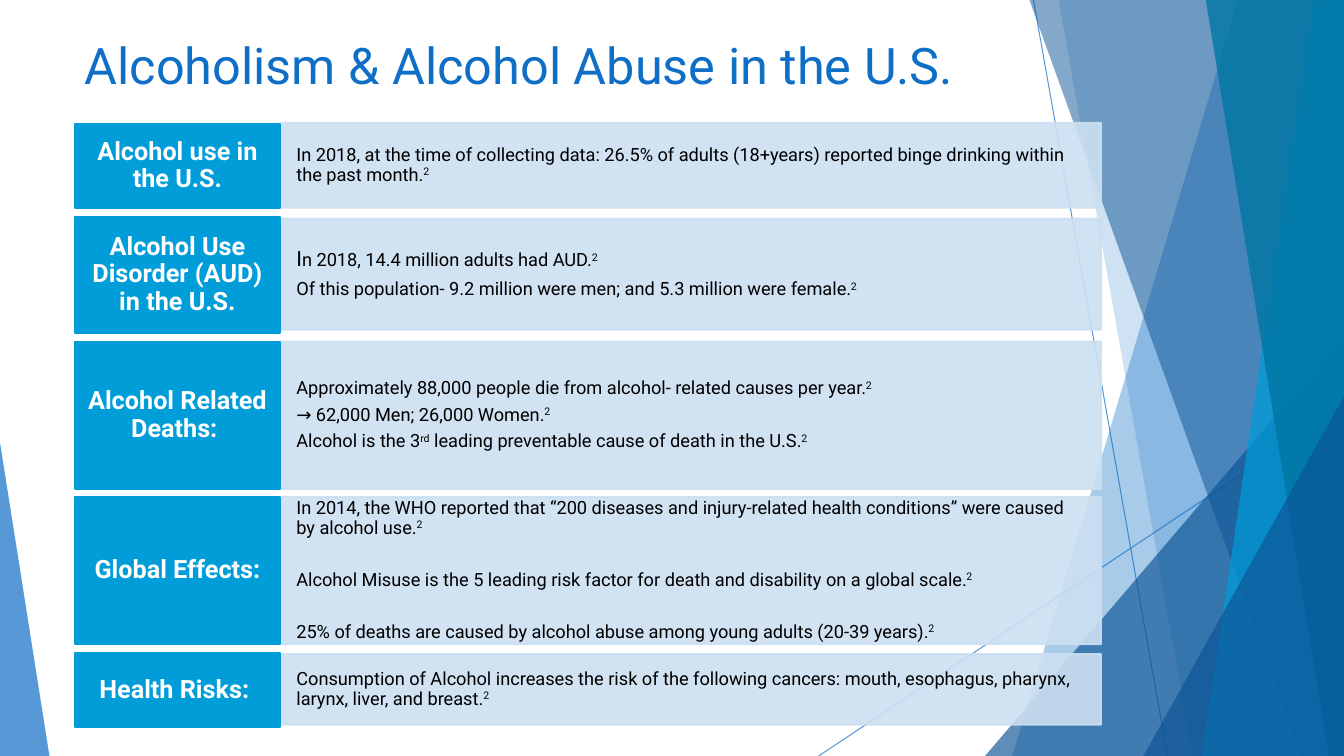
from dataclasses import dataclass

from lxml import etree
from pptx import Presentation
from pptx.dml.color import RGBColor
from pptx.enum.shapes import MSO_CONNECTOR, MSO_SHAPE
from pptx.enum.text import MSO_ANCHOR, MSO_AUTO_SIZE, PP_ALIGN
from pptx.oxml.ns import qn
from pptx.util import Emu, Pt

EMU_PER_PX = 9144
SLIDE_WIDTH, SLIDE_HEIGHT = 1333, 750

STRAIGHT = MSO_CONNECTOR.STRAIGHT
RECTANGLE, TRIANGLE = MSO_SHAPE.RECTANGLE, MSO_SHAPE.ISOSCELES_TRIANGLE
TOP, MIDDLE = MSO_ANCHOR.TOP, MSO_ANCHOR.MIDDLE
LEFT, CENTER = PP_ALIGN.LEFT, PP_ALIGN.CENTER
NO_AUTOFIT = MSO_AUTO_SIZE.NONE

BLUE = RGBColor(0x0F, 0x6F, 0xC6)
NAVY = RGBColor(0x0B, 0x53, 0x94)
CYAN = RGBColor(0x00, 0x9D, 0xD9)
TEAL = RGBColor(0x00, 0x76, 0xA3)
PALE_BLUE = RGBColor(0xCC, 0xDF, 0xF1)
WHITE = RGBColor(0xFF, 0xFF, 0xFF)
BLACK = RGBColor(0x00, 0x00, 0x00)

FONT = "Roboto"
BODY_SIZE = 13
HEADING_LEFT, HEADING_WIDTH, HEADING_INSET = 74, 204, 11
PANEL_LEFT, PANEL_WIDTH, PANEL_INSET = 278, 814, 16


@dataclass(frozen=True)
class Ray:
    start: tuple[int, int]
    end: tuple[int, int]


@dataclass(frozen=True)
class Band:
    """Facet reaching the right slide edge, given by its left corners."""
    top_left: int
    bottom_left: int
    color: RGBColor
    opacity: int


@dataclass(frozen=True)
class Wedge:
    """Right triangle standing on the bottom slide edge."""
    left: int
    top: int
    width: int
    apex: int
    color: RGBColor
    opacity: int


@dataclass(frozen=True)
class Topic:
    """Heading with its facts; carets enclose superscript text."""
    heading: str
    heading_top: int
    heading_height: int
    panel_top: int
    panel_height: int
    facts: tuple[str, ...]
    gap: int = 5
    initial_size: int = BODY_SIZE


RAYS = [Ray((1025, 0), (1158, 750)), Ray((1333, 403), (812, 750))]
FACETS = [
    Band(1228, 1004, BLUE, 36),
    Band(1050, 1183, BLUE, 20),
    Wedge(977, 333, 356, 1, NAVY, 66),
    Band(1021, 1291, NAVY, 50),
    Band(1303, 1192, CYAN, 70),
    Band(1196, 1318, TEAL, 80),
    Wedge(1134, 393, 199, 1, NAVY, 66),
    Wedge(0, 439, 49, 0, BLUE, 70),
]
TOPICS = [
    Topic("Alcohol use in the U.S.", 123, 83, 122, 84, (
        "In 2018, at the time of collecting data: 26.5% of adults (18+years) "
        "reported binge drinking within the past month.^2^",
    )),
    Topic("Alcohol Use Disorder (AUD) in the U.S.", 215, 115, 217, 110, (
        "In 2018, 14.4 million adults had AUD.^2^",
        "Of this population- 9.2 million were men; and 5.3 million were female.^2^",
    ), gap=6, initial_size=15),
    Topic("Alcohol Related Deaths: ", 339, 146, 339, 146, (
        "Approximately 88,000 people die from alcohol- related causes per year.^2^",
        "→ 62,000 Men; 26,000 Women.^2^",
        "Alcohol is the 3^rd^ leading preventable cause of death in the U.S.^2^",
    )),
    Topic("Global Effects:", 493, 146, 493, 146, (
        "In 2014, the WHO reported that “200 diseases and injury-related health "
        "conditions” were caused by alcohol use.^2^",
        "Alcohol Misuse is the 5 leading risk factor for death and disability "
        "on a global scale.^2^",
        "25% of deaths are caused by alcohol abuse among young adults "
        "(20-39 years).^2^",
    ), gap=23),
    Topic("Health Risks: ", 648, 73, 649, 70, (
        "Consumption of Alcohol increases the risk of the following cancers: "
        "mouth, esophagus, pharynx, larynx, liver, and breast.^2^",
    )),
]


def px(length: int) -> Emu:
    return Emu(length * EMU_PER_PX)


def apply_format(target, values: dict) -> None:
    for name, value in values.items():
        setattr(target, name, value)


def set_opacity(shape, percent: int) -> None:
    """Apply one opacity to the fill and line colours of a shape."""
    for color in shape._element.spPr.iter(qn("a:srgbClr")):
        etree.SubElement(color, qn("a:alpha"), val=str(percent * 1000))


def add_run(paragraph, text: str, size: int, color: RGBColor, bold: bool = False):
    run = paragraph.add_run()
    run.text = text
    apply_format(run.font, {"name": FONT, "size": Pt(size), "bold": bold})
    run.font.color.rgb = color
    return run


def add_ray(slide, ray: Ray) -> None:
    connector = slide.shapes.add_connector(
        STRAIGHT, *map(px, ray.start), *map(px, ray.end))
    connector.line.color.rgb = BLUE
    connector.line.width = Pt(0.75)
    etree.SubElement(connector._element.spPr, qn("a:effectLst"))
    set_opacity(connector, 70)


def add_facet(slide, facet: Band | Wedge) -> None:
    if isinstance(facet, Band):
        builder = slide.shapes.build_freeform(facet.top_left, 0, scale=EMU_PER_PX)
        builder.add_line_segments([
            (SLIDE_WIDTH, 0), (SLIDE_WIDTH, SLIDE_HEIGHT),
            (facet.bottom_left, SLIDE_HEIGHT)], close=True)
        shape = builder.convert_to_shape()
    else:
        shape = slide.shapes.add_shape(
            TRIANGLE, px(facet.left), px(facet.top),
            px(facet.width), px(SLIDE_HEIGHT - facet.top))
        shape.adjustments[0] = facet.apex
    shape.shadow.inherit = False
    shape.fill.solid()
    shape.fill.fore_color.rgb = facet.color
    shape.line.fill.background()
    set_opacity(shape, facet.opacity)


def add_box(slide, left: int, top: int, width: int, height: int,
            color: RGBColor, inset: int):
    box = slide.shapes.add_shape(RECTANGLE, *map(px, (left, top, width, height)))
    box.shadow.inherit = False
    box.fill.solid()
    box.fill.fore_color.rgb = color
    box.line.color.rgb = color
    box.line.width = Pt(1.5)
    apply_format(box.text_frame, {
        "word_wrap": True, "vertical_anchor": MIDDLE,
        "margin_left": px(inset), "margin_right": px(inset),
        "margin_top": 0, "margin_bottom": 0})
    return box


def add_fact(paragraph, fact: str, initial_size: int) -> None:
    if initial_size != BODY_SIZE:
        add_run(paragraph, fact[0], initial_size, BLACK)
        fact = fact[1:]
    for position, piece in enumerate(fact.split("^")):
        if piece:
            run = add_run(paragraph, piece, BODY_SIZE, BLACK)
            if position % 2:
                run._r.get_or_add_rPr().set("baseline", "30000")


def add_topic(slide, topic: Topic) -> None:
    panel = add_box(slide, PANEL_LEFT, topic.panel_top, PANEL_WIDTH,
                    topic.panel_height, PALE_BLUE, PANEL_INSET)
    set_opacity(panel, 90)
    frame = panel.text_frame
    for index, fact in enumerate(topic.facts):
        paragraph = frame.add_paragraph() if index else frame.paragraphs[0]
        apply_format(paragraph, {
            "alignment": LEFT, "line_spacing": 0.9,
            "space_before": Pt(topic.gap if index else 0)})
        add_fact(paragraph, fact, BODY_SIZE if index else topic.initial_size)

    heading = add_box(slide, HEADING_LEFT, topic.heading_top, HEADING_WIDTH,
                      topic.heading_height, CYAN, HEADING_INSET)
    paragraph = heading.text_frame.paragraphs[0]
    apply_format(paragraph, {"alignment": CENTER, "line_spacing": 0.9})
    add_run(paragraph, topic.heading, 18, WHITE, bold=True)


def add_title(slide, text: str) -> None:
    title = slide.shapes.title
    apply_format(title, {"left": px(74), "top": px(29),
                         "width": px(940), "height": px(144)})
    apply_format(title.text_frame, {
        "word_wrap": True, "vertical_anchor": TOP, "auto_size": NO_AUTOFIT})
    paragraph = title.text_frame.paragraphs[0]
    paragraph.alignment = LEFT
    add_run(paragraph, text, 36, BLUE)


def main() -> None:
    presentation = Presentation()
    presentation.slide_width = px(SLIDE_WIDTH)
    presentation.slide_height = px(SLIDE_HEIGHT)
    slide = presentation.slides.add_slide(presentation.slide_layouts[5])
    add_title(slide, "Alcoholism & Alcohol Abuse in the U.S.")
    for ray in RAYS:
        add_ray(slide, ray)
    for facet in FACETS:
        add_facet(slide, facet)
    for topic in TOPICS:
        add_topic(slide, topic)
    presentation.save("out.pptx")


if __name__ == "__main__":
    main()
